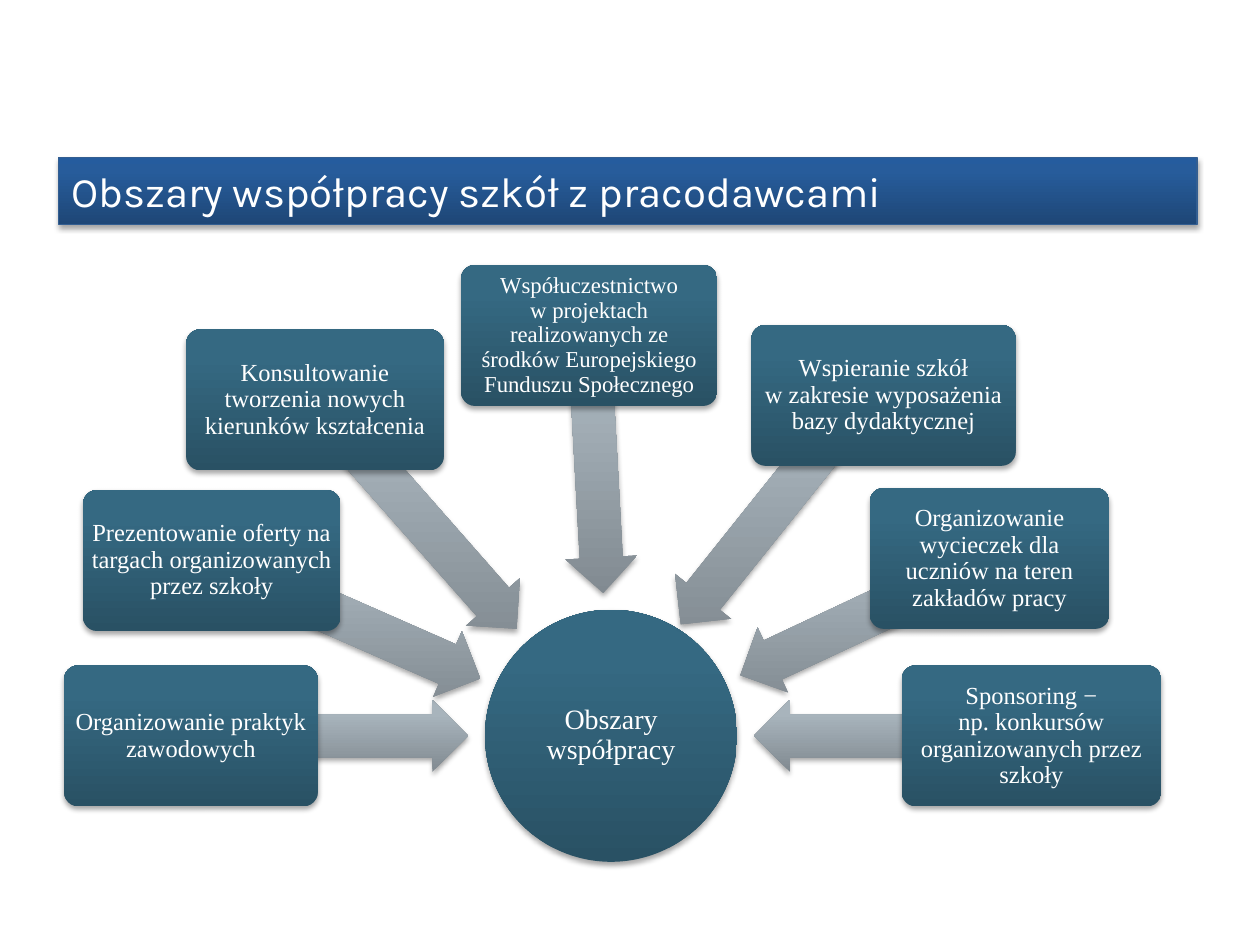
import math

import pptx
import pptx.dml.color
import pptx.enum.shapes
import pptx.enum.text
import pptx.oxml
import pptx.oxml.ns
import pptx.util

Pt = pptx.util.Pt
RGBColor = pptx.dml.color.RGBColor
MSO_SHAPE = pptx.enum.shapes.MSO_SHAPE
PP_ALIGN = pptx.enum.text.PP_ALIGN

WHITE = RGBColor(0xFF, 0xFF, 0xFF)
TITLE_LINE = RGBColor(0x33, 0x5E, 0x91)
BLUE = [RGBColor(0x1E, 0x47, 0x77), RGBColor(0x27, 0x5C, 0x9B), RGBColor(0x25, 0x5C, 0x9E)]
TEAL = [RGBColor(0x29, 0x51, 0x64), RGBColor(0x35, 0x69, 0x82), RGBColor(0x34, 0x6A, 0x84)]
GREY = [RGBColor(0x81, 0x8A, 0x91), RGBColor(0xA8, 0xB4, 0xBC), RGBColor(0xA8, 0xB5, 0xBD)]
NAMESPACE = pptx.oxml.ns.nsdecls("a")

presentation = pptx.Presentation()
presentation.slide_width = Pt(720)
presentation.slide_height = Pt(540)
slide = presentation.slides.add_slide(presentation.slide_layouts[6])


def add_glossy_shape(kind, left, top, width, height, colors):
    shape = slide.shapes.add_shape(kind, Pt(left), Pt(top), Pt(width), Pt(height))
    shape.line.fill.background()
    stops = "".join(
        f'<a:gs pos="{position}"><a:srgbClr val="{color}"/></a:gs>'
        for position, color in zip((0, 80000, 100000), colors)
    )
    gradient = pptx.oxml.parse_xml(
        f'<a:gradFill {NAMESPACE} rotWithShape="0"><a:gsLst>{stops}</a:gsLst>'
        '<a:lin ang="16200000" scaled="0"/></a:gradFill>'
    )
    properties = shape.element.spPr
    properties.find(pptx.oxml.ns.qn("a:ln")).addprevious(gradient)
    shape.shadow.inherit = False
    shadow = pptx.oxml.parse_xml(
        f'<a:outerShdw {NAMESPACE} blurRad="{Pt(3.1)}" dist="{Pt(1.8)}" dir="5400000" '
        'rotWithShape="0"><a:srgbClr val="000000"><a:alpha val="35000"/></a:srgbClr></a:outerShdw>'
    )
    properties.find(pptx.oxml.ns.qn("a:effectLst")).append(shadow)
    return shape


def write_text(shape, text, size, font_name, alignment, spacing, inset):
    frame = shape.text_frame
    frame.word_wrap = True
    frame.vertical_anchor = pptx.enum.text.MSO_ANCHOR.MIDDLE
    frame.margin_left = frame.margin_right = Pt(inset)
    frame.margin_top = frame.margin_bottom = Pt(min(inset, 4.6))
    paragraph = frame.paragraphs[0]
    paragraph.text = text
    paragraph.alignment = alignment
    paragraph.line_spacing = spacing
    for run in paragraph.runs:
        run.font.size = Pt(size)
        run.font.name = font_name
        run.font.color.rgb = WHITE


title = add_glossy_shape(MSO_SHAPE.RECTANGLE, 33.6, 90, 650.4, 38.2, BLUE)
title.line.color.rgb = TITLE_LINE
title.line.width = Pt(0.75)
write_text(title, "Obszary współpracy szkół z pracodawcami", 24, "Karla", PP_ALIGN.LEFT, 1, 7.2)

hub_x, hub_y, hub_size = 349.2, 420.5, 144
hub = add_glossy_shape(
    MSO_SHAPE.OVAL, hub_x - hub_size / 2, hub_y - hub_size / 2, hub_size, hub_size, TEAL
)
write_text(hub, "Obszary współpracy", 16, "Times New Roman", PP_ALIGN.CENTER, 0.9, 0.8)

areas = [
    ("Organizowanie praktyk zawodowych", 36.6, 380.2, 145, 14, 0),
    ("Prezentowanie oferty na targach organizowanych przez szkoły", 47.4, 280, 147.2, 14, 0),
    ("Konsultowanie tworzenia nowych kierunków kształcenia", 106.4, 188.2, 147.2, 14, 0),
    ("Współuczestnictwo\nw projektach realizowanych ze środków Europejskiego Funduszu Społecznego",
     263.4, 151.4, 146.4, 13, 0),
    ("Wspieranie szkół\nw zakresie wyposażenia bazy dydaktycznej", 429.4, 185.6, 151, 14, -11.2),
    ("Organizowanie wycieczek dla uczniów na teren zakładów pracy", 497, 278.8, 137, 14, 0),
    ("Sponsoring −\nnp. konkursów organizowanych przez szkoły", 515.2, 380.2, 148.4, 14, 0),
]
box_height, arrow_height, arrow_gap = 80.6, 41, 81.6

for text, left, top, width, size, arrow_shift in areas:
    box_x, box_y = left + width / 2, top + box_height / 2
    angle = math.atan2(hub_y - box_y, hub_x - box_x)
    length = math.hypot(hub_x - box_x, hub_y - box_y) - arrow_gap
    arrow_x = box_x + arrow_shift + length / 2 * math.cos(angle)
    arrow_y = box_y + length / 2 * math.sin(angle)
    arrow = add_glossy_shape(
        MSO_SHAPE.LEFT_ARROW, arrow_x - length / 2, arrow_y - arrow_height / 2,
        length, arrow_height, GREY,
    )
    arrow.adjustments[0] = 0.6
    arrow.adjustments[1] = 0.5
    arrow.rotation = math.degrees(angle) + 180

    box = add_glossy_shape(MSO_SHAPE.ROUNDED_RECTANGLE, left, top, width, box_height, TEAL)
    box.adjustments[0] = 0.1
    write_text(box, text, size, "Times New Roman", PP_ALIGN.CENTER, 0.9, 2.2)

presentation.save("out.pptx")
